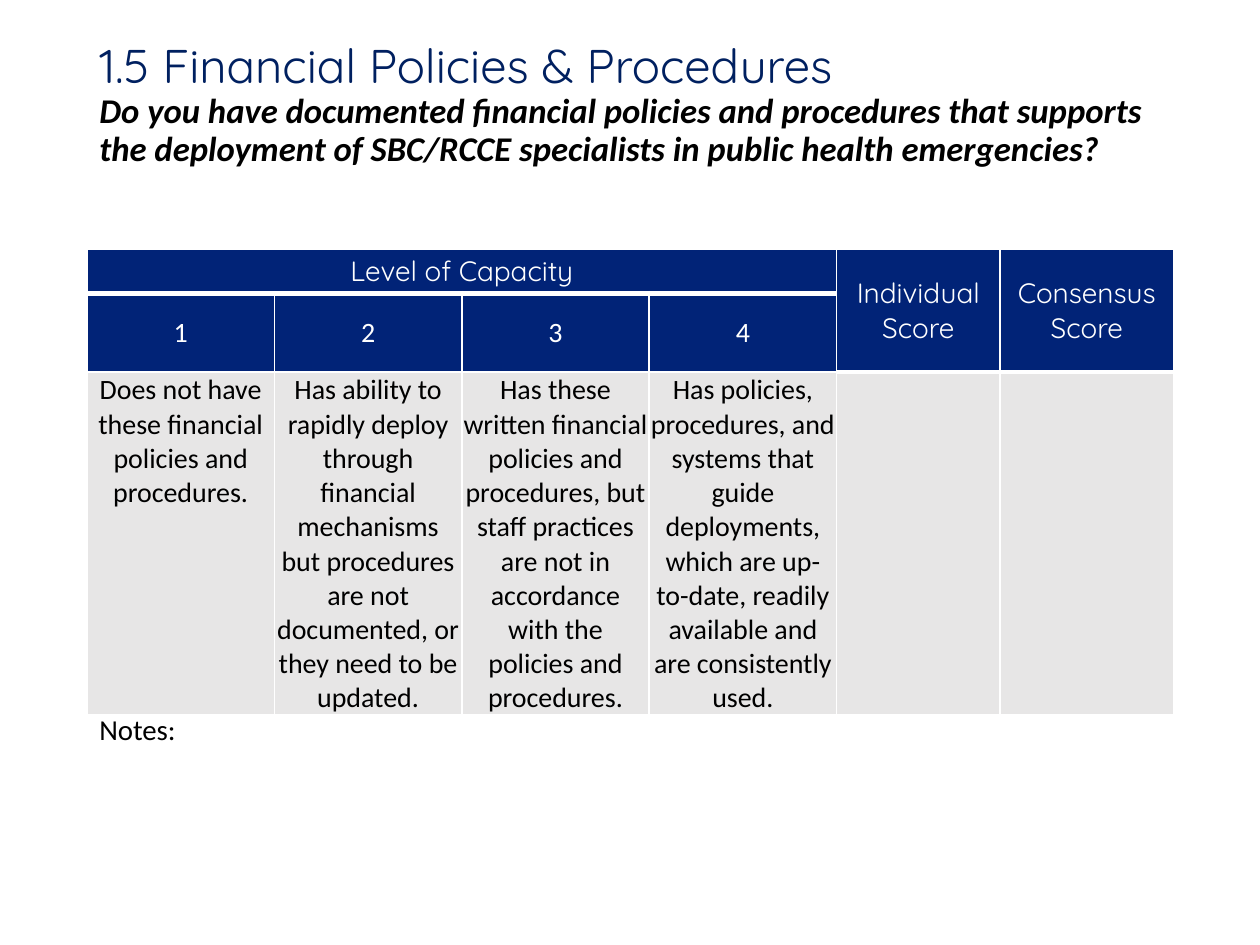
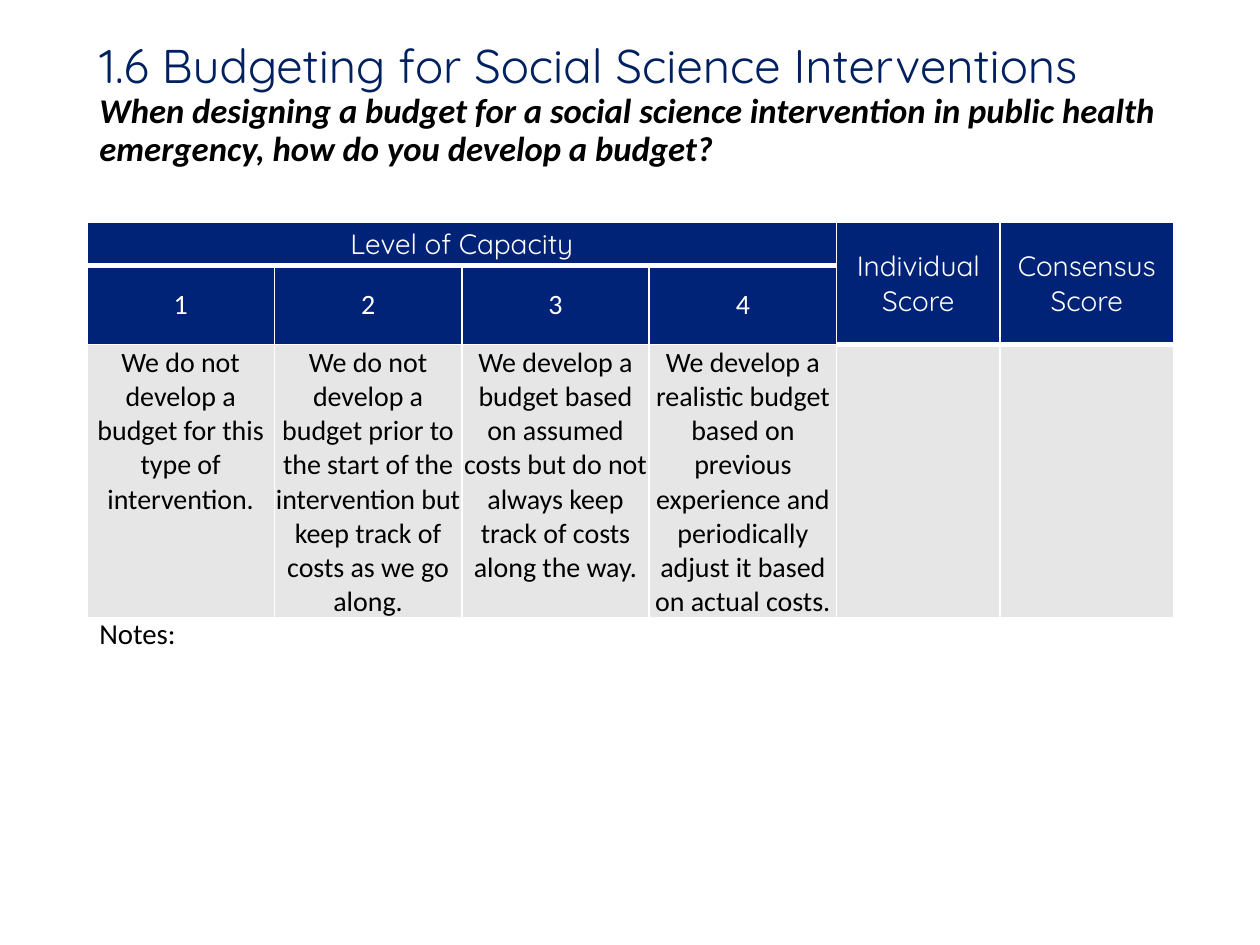
import pptx
import pptx.util
import pptx.dml.color
import pptx.enum.text
import pptx.oxml.ns
from lxml import etree

Pt = pptx.util.Pt
RGBColor = pptx.dml.color.RGBColor
ALIGN = pptx.enum.text.PP_ALIGN
ANCHOR = pptx.enum.text.MSO_ANCHOR

TITLE_NAVY = RGBColor(0x00, 0x20, 0x60)
HEADER_BLUE = RGBColor(0x01, 0x23, 0x77)
BODY_GREY = RGBColor(0xE7, 0xE6, 0xE6)
WHITE = RGBColor(0xFF, 0xFF, 0xFF)
BLACK = RGBColor(0x00, 0x00, 0x00)

HEADING_FONT = "Quicksand"
TEXT_FONT = "Calibri"
TITLE_FORMAT = {"name": HEADING_FONT, "size": Pt(27), "color": TITLE_NAVY}
QUESTION_FORMAT = {"name": TEXT_FONT, "size": Pt(19.8), "color": BLACK,
                   "bold": True, "italic": True}
NOTES_FORMAT = {"name": TEXT_FONT, "size": Pt(16.5), "color": BLACK}
HEADER_FORMAT = {"name": HEADING_FONT, "size": Pt(16), "color": WHITE, "bold": False}
LEVEL_FORMAT = HEADER_FORMAT | {"name": TEXT_FONT}
ANSWER_FORMAT = LEVEL_FORMAT | {"color": BLACK}

HEADER_CELL = {"vertical_anchor": ANCHOR.MIDDLE, "margin_left": Pt(5), "margin_right": Pt(5),
               "margin_top": Pt(2.5), "margin_bottom": Pt(2.5)}
ANSWER_CELL = {"vertical_anchor": ANCHOR.TOP, "margin_left": Pt(0.7), "margin_right": Pt(0.7),
               "margin_top": Pt(0.7), "margin_bottom": Pt(0)}
TEXT_BOX = {"word_wrap": True, "vertical_anchor": ANCHOR.TOP,
            "margin_left": Pt(7.2), "margin_right": Pt(7.2),
            "margin_top": Pt(3.6), "margin_bottom": Pt(3.6)}

LEFT, WIDTH = 49.7, 620.6
LEVEL_COUNT = 4
COLUMN_WIDTHS = [107.1] * LEVEL_COUNT + [93.4, 99.2]
HEADER_HEIGHTS = [25, 45]

CRITERIA = [
    {
        "title": "1.5 Financial Policies & Procedures",
        "question": "Do you have documented financial policies and procedures that supports "
                    "the deployment of SBC/RCCE specialists in public health emergencies?",
        "answers": [
            "Does not have these financial policies and procedures.",
            "Has ability to rapidly deploy through financial mechanisms but procedures "
            "are not documented, or they need to be updated.",
            "Has these written financial policies and procedures, but staff practices "
            "are not in accordance with the policies and procedures.",
            "Has policies, procedures, and systems that guide deployments, which are "
            "up-to-date, readily available and are consistently used.",
        ],
        "table_top": 142.6,
        "answer_height": 196,
        "notes_top": 405.4,
    },
    {
        "title": "1.6 Budgeting for Social Science Interventions",
        "question": "When designing a budget for a social science intervention in public "
                    "health emergency, how do you develop a budget?",
        "answers": [
            "We do not develop a budget for this type of intervention.",
            "We do not develop a budget prior to the start of the intervention but keep "
            "track of costs as we go along.",
            "We develop a budget based on assumed costs but do not always keep track of "
            "costs along the way.",
            "We develop a realistic budget based on previous experience and periodically "
            "adjust it based on actual costs.",
        ],
        "table_top": 126.8,
        "answer_height": 156.5,
        "notes_top": 350.6,
    },
]


def apply_format(target, values):
    for attribute, value in values.items():
        if attribute == "color":
            target.color.rgb = value
        else:
            setattr(target, attribute, value)


def add_text(slide, box, lines):
    frame = slide.shapes.add_textbox(*map(Pt, box)).text_frame
    apply_format(frame, TEXT_BOX)
    paragraph = frame.paragraphs[0]
    paragraph.line_spacing = 0.9
    for position, (wording, text_format) in enumerate(lines):
        if position:
            paragraph.add_line_break()
        run = paragraph.add_run()
        run.text = wording
        apply_format(run.font, text_format)


def add_borders(cell, widths):
    properties = cell._tc.get_or_add_tcPr()
    for side, width in widths.items():
        edge = etree.SubElement(properties, pptx.oxml.ns.qn(f"a:ln{side}"), w=str(Pt(width)))
        paint = etree.SubElement(edge, pptx.oxml.ns.qn("a:solidFill"))
        etree.SubElement(paint, pptx.oxml.ns.qn("a:srgbClr"), val=str(WHITE))


def fill_cell(cell, wording, cell_format, text_format, color, bottom_border=1):
    apply_format(cell, cell_format)
    add_borders(cell, {"L": 1, "R": 1, "B": bottom_border})
    cell.fill.solid()
    cell.fill.fore_color.rgb = color
    paragraph = cell.text_frame.paragraphs[0]
    paragraph.alignment = ALIGN.CENTER
    if wording:
        run = paragraph.add_run()
        run.text = wording
        apply_format(run.font, text_format)


def add_capacity_table(slide, left, top, answers, answer_height):
    row_heights = HEADER_HEIGHTS + [answer_height]
    table = slide.shapes.add_table(
        len(row_heights), len(COLUMN_WIDTHS), Pt(left), Pt(top),
        Pt(sum(COLUMN_WIDTHS)), Pt(sum(row_heights))).table
    table.first_row = table.horz_banding = False
    for column, width in zip(table.columns, COLUMN_WIDTHS):
        column.width = Pt(width)
    for row, height in zip(table.rows, row_heights):
        row.height = Pt(height)

    scores = ["Individual Score", "Consensus Score"]
    headings = ["Level of Capacity"] + [""] * (LEVEL_COUNT - 1) + scores
    levels = [str(level + 1) for level in range(LEVEL_COUNT)]
    blanks = [""] * len(scores)
    for index, (heading, level, answer) in enumerate(
            zip(headings, levels + blanks, answers + blanks)):
        fill_cell(table.cell(0, index), heading, HEADER_CELL, HEADER_FORMAT, HEADER_BLUE, 3)
        fill_cell(table.cell(1, index), level, HEADER_CELL, LEVEL_FORMAT, HEADER_BLUE,
                  1 if level else 3)
        fill_cell(table.cell(2, index), answer, ANSWER_CELL, ANSWER_FORMAT, BODY_GREY)

    table.cell(0, 0).merge(table.cell(0, LEVEL_COUNT - 1))
    for index in range(LEVEL_COUNT, len(COLUMN_WIDTHS)):
        table.cell(0, index).merge(table.cell(1, index))


def add_criterion_slide(deck, criterion):
    slide = deck.slides.add_slide(deck.slide_layouts[6])
    add_text(slide, (LEFT, 20.9, WIDTH, 85),
             [(criterion["title"], TITLE_FORMAT), (criterion["question"], QUESTION_FORMAT)])
    add_text(slide, (LEFT, criterion["notes_top"], WIDTH, 54), [("Notes:", NOTES_FORMAT)])
    add_capacity_table(slide, LEFT, criterion["table_top"],
                       criterion["answers"], criterion["answer_height"])


def main():
    deck = pptx.Presentation()
    deck.slide_width, deck.slide_height = Pt(720), Pt(540)
    for criterion in CRITERIA:
        add_criterion_slide(deck, criterion)
    deck.save("out.pptx")


if __name__ == "__main__":
    main()
